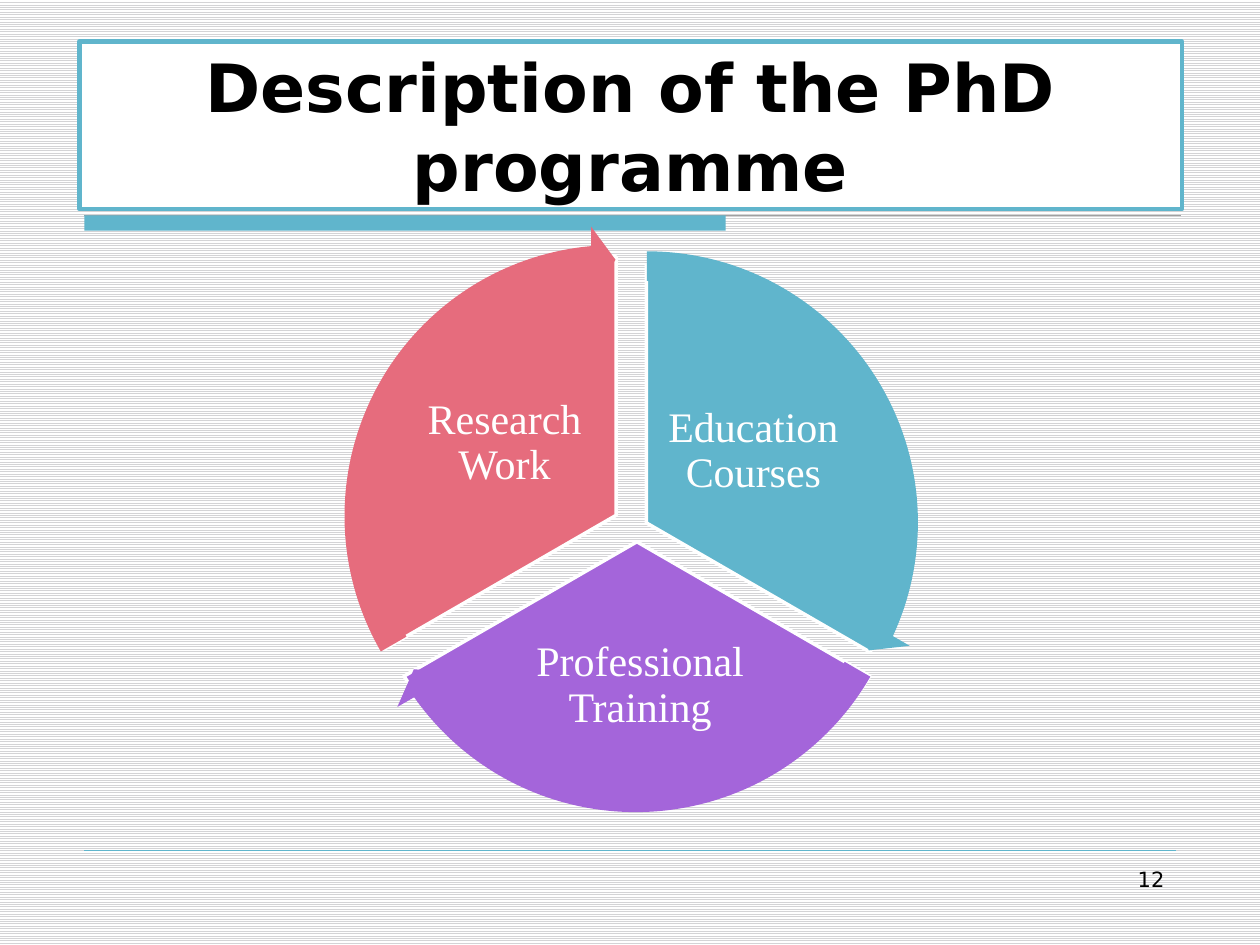
import pptx
import pptx.util
import pptx.dml.color
import pptx.enum.dml
import pptx.enum.shapes
import pptx.enum.text
import pptx.oxml

Inches = pptx.util.Inches
Pt = pptx.util.Pt
SHAPE = pptx.enum.shapes.MSO_SHAPE
ALIGN = pptx.enum.text.PP_ALIGN
MIDDLE = pptx.enum.text.MSO_ANCHOR.MIDDLE

TEAL, PURPLE, CORAL = "60B5CC", "A465DA", "E66C7D"
WHITE, BLACK, GREY = "FFFFFF", "000000", "A0A0A0"
SANS, SERIF = "DejaVu Sans", "Times New Roman"

PIE_SIZES = [(4.1, 4.1), (4.33, 4.1), (4.28, 4.1)]
ARROW_SIZE = 4.61

SECTORS = [
    ("Education Courses", TEAL, (3.08, 2.1), (162, 18),
     (5.25, 2.97, 1.46, 1.22), (2.83, 1.84), (14.725, 161.994)),
    ("Professional Training", PURPLE, (2.89, 2.25), (18, 90),
     (3.92, 4.91, 2.32, 1.07), (2.74, 1.99), (86.72, 18.005)),
    ("Research Work", CORAL, (2.75, 2.04), (90, 162),
     (3.24, 2.91, 1.53, 1.22), (2.58, 1.79), (158.73, 90)),
]


def rgb(hex_colour):
    return pptx.dml.color.RGBColor.from_string(hex_colour)


def place(*lengths):
    return [Inches(length) for length in lengths]


def write(frame, text, size, font, colour, align, bold=False):
    frame.word_wrap = True
    paragraph = frame.paragraphs[0]
    paragraph.alignment = align
    run = paragraph.add_run()
    run.text = text
    run.font.size = Pt(size)
    run.font.name = font
    run.font.bold = bold
    run.font.color.rgb = rgb(colour)
    return paragraph


def set_background(slide):
    fill = slide.background.fill
    fill.patterned()
    fill.pattern = pptx.enum.dml.MSO_PATTERN.LIGHT_HORIZONTAL
    fill.fore_color.rgb = rgb("D4D4D6")
    fill.back_color.rgb = rgb(WHITE)


def add_rule(slide, y, left, right, colour, width):
    rule = slide.shapes.add_connector(
        pptx.enum.shapes.MSO_CONNECTOR.STRAIGHT, *place(left, y, right, y))
    rule.line.color.rgb = rgb(colour)
    rule.line.width = Pt(width)
    rule._element.spPr.append(pptx.oxml.parse_xml(
        '<a:effectLst xmlns:a="http://schemas.openxmlformats.org/drawingml/2006/main"/>'))


def add_filled(slide, kind, box, colour, adjustments=(), outline=None):
    shape = slide.shapes.add_shape(kind, *place(*box))
    shape.shadow.inherit = False
    shape.fill.solid()
    shape.fill.fore_color.rgb = rgb(colour)
    for index, value in enumerate(adjustments):
        shape.adjustments[index] = value
    if outline:
        shape.line.color.rgb = rgb(outline)
        shape.line.width = Pt(2)
    else:
        shape.line.fill.background()


def format_title(slide, text):
    title = slide.shapes.title
    title.left, title.top, title.width, title.height = place(0.63, 0.33, 8.75, 1.33)
    title.fill.solid()
    title.fill.fore_color.rgb = rgb(WHITE)
    title.line.color.rgb = rgb(TEAL)
    title.line.width = Pt(2.5)
    title.text_frame.vertical_anchor = MIDDLE
    title.text_frame.auto_size = pptx.enum.text.MSO_AUTO_SIZE.NONE
    write(title.text_frame, text, 38, SANS, BLACK, ALIGN.CENTER, bold=True)


def add_sector_label(slide, text, box):
    frame = slide.shapes.add_textbox(*place(*box)).text_frame
    frame.vertical_anchor = MIDDLE
    frame.margin_left = frame.margin_right = Inches(0.03)
    frame.margin_top = frame.margin_bottom = Inches(0.03)
    paragraph = write(frame, text, 24, SERIF, WHITE, ALIGN.CENTER)
    paragraph.line_spacing = 0.9
    paragraph.space_after = Pt(8.4)


def add_cycle(slide):
    for sector, pie_size in zip(SECTORS, PIE_SIZES):
        label, colour, pie_corner, pie_angles, label_box, _, _ = sector
        add_filled(slide, SHAPE.PIE, pie_corner + pie_size, colour, pie_angles, WHITE)
        add_sector_label(slide, label, label_box)
    for _, colour, _, _, _, corner, (end, start) in SECTORS:
        add_filled(slide, SHAPE.CIRCULAR_ARROW, corner + (ARROW_SIZE, ARROW_SIZE),
                   colour, (0.051, 3.275, end, start, 0.059))


def add_page_number(slide, number):
    frame = slide.shapes.add_textbox(*place(7.17, 6.83, 2.17, 0.52)).text_frame
    write(frame, number, 12, SANS, BLACK, ALIGN.RIGHT)


def main():
    deck = pptx.Presentation()
    deck.slide_width, deck.slide_height = place(10, 7.5)
    slide = deck.slides.add_slide(deck.slide_layouts.get_by_name("Title Only"))
    set_background(slide)
    add_rule(slide, 1.71, 0.67, 9.37, GREY, 0.75)
    add_filled(slide, SHAPE.RECTANGLE, (0.67, 1.71, 5.09, 0.12), TEAL)
    add_rule(slide, 6.75, 0.67, 9.33, TEAL, 0.25)
    format_title(slide, "Description of the PhD programme")
    add_page_number(slide, "12")
    add_cycle(slide)
    deck.save("out.pptx")


if __name__ == "__main__":
    main()
